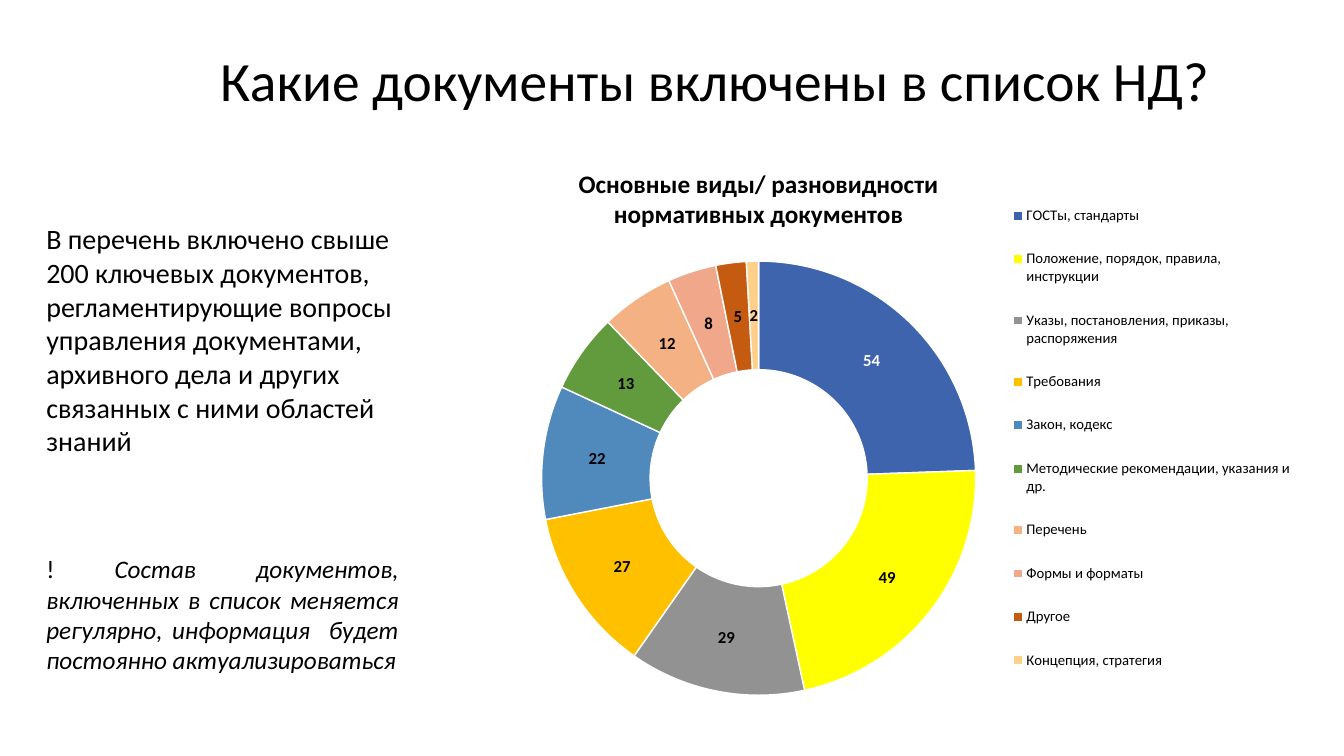
import pptx
import pptx.chart.data
import pptx.dml.color
import pptx.enum.chart
import pptx.enum.text
import pptx.oxml
import pptx.oxml.ns
import pptx.util

Pt = pptx.util.Pt
FONT = "Calibri"
COLOURS = {"text": "000000", "light": "FFFFFF"}
DOCUMENT_KINDS = [
    ("ГОСТы, стандарты", 54, "3D64AD"),
    ("Положение, порядок, правила, инструкции", 49, "FFFF00"),
    ("Указы, постановления, приказы, распоряжения", 29, "929292"),
    ("Требования", 27, "FFC000"),
    ("Закон, кодекс", 22, "508ABD"),
    ("Методические рекомендации, указания и др.", 13, "629A3E"),
    ("Перечень", 12, "F4B183"),
    ("Формы и форматы", 8, "F1A78A"),
    ("Другое", 5, "C55A11"),
    ("Концепция, стратегия", 2, "FFD08A"),
]
CHART_TITLE = ["Основные виды/ разновидности", "нормативных документов"]


def rgb(value):
    return pptx.dml.color.RGBColor.from_string(value)


def style_font(font, size, bold=False, colour="text"):
    font.name = FONT
    font.size = Pt(size)
    font.bold = bold
    font.color.rgb = rgb(COLOURS[colour])


def place_in_chart(part, index, inner=False, **fractions):
    """Give a chart part a manual layout in fractions of the chart."""
    for old in part.findall(pptx.oxml.ns.qn("c:layout")):
        part.remove(old)
    settings = [("layoutTarget", "inner")] if inner else []
    settings += [("xMode", "edge"), ("yMode", "edge"), *fractions.items()]
    items = "".join(f'<c:{tag} val="{value}"/>' for tag, value in settings)
    part.insert(index, pptx.oxml.parse_xml(
        f'<c:layout {pptx.oxml.ns.nsdecls("c")}>'
        f"<c:manualLayout>{items}</c:manualLayout></c:layout>"))


def add_heading(slide, left, top, width, height):
    heading = slide.shapes.title
    heading.left, heading.top = Pt(left), Pt(top)
    heading.width, heading.height = Pt(width), Pt(height)
    frame = heading.text_frame
    frame.text = "Какие документы включены в список НД?"
    frame.auto_size = pptx.enum.text.MSO_AUTO_SIZE.NONE
    frame.vertical_anchor = pptx.enum.text.MSO_ANCHOR.MIDDLE
    paragraph = frame.paragraphs[0]
    paragraph.alignment = pptx.enum.text.PP_ALIGN.LEFT
    paragraph.line_spacing = 0.9
    style_font(paragraph.font, 39.6)


def add_note(slide, left, top, width, height, size):
    """Add an empty wrapping text box and return its paragraph."""
    note = slide.shapes.add_textbox(Pt(left), Pt(top), Pt(width), Pt(height))
    note.text_frame.word_wrap = True
    paragraph = note.text_frame.paragraphs[0]
    style_font(paragraph.font, size)
    return paragraph


def add_explanation(slide, left, top, width):
    summary = add_note(slide, left, top, width, 177, 20)
    summary.add_run().text = (
        "В перечень включено свыше 200 ключевых документов, регламентирующие "
        "вопросы управления документами, архивного дела и других связанных "
        "с ними областей знаний")

    warning = add_note(slide, left, top + 237, width - 15, 94, 18)
    warning.alignment = pptx.enum.text.PP_ALIGN.JUSTIFY
    warning.add_run().text = "! "
    changes = warning.add_run()
    changes.text = (
        "Состав документов, включенных в список меняется регулярно, "
        "информация  будет постоянно актуализироваться")
    changes.font.italic = True


def add_kinds_chart(slide, left, top, width, height):
    kinds, counts, fills = zip(*DOCUMENT_KINDS)
    data = pptx.chart.data.CategoryChartData()
    data.categories = kinds
    data.add_series("Series 1", counts)
    chart = slide.shapes.add_chart(
        pptx.enum.chart.XL_CHART_TYPE.DOUGHNUT,
        Pt(left), Pt(top), Pt(width), Pt(height), data).chart
    style_font(chart.font, 10)

    chart.has_title = True
    title = chart.chart_title
    title.text_frame.text = "\n".join(CHART_TITLE)
    sides = (pptx.enum.text.PP_ALIGN.LEFT, pptx.enum.text.PP_ALIGN.RIGHT)
    for paragraph, side in zip(title.text_frame.paragraphs, sides):
        paragraph.alignment = side
        style_font(paragraph.font, 18, bold=True)
    place_in_chart(title._element, 1, x=0.15, y=0.03)

    chart.has_legend = True
    chart.legend.position = pptx.enum.chart.XL_LEGEND_POSITION.RIGHT
    chart.legend.include_in_layout = False
    style_font(chart.legend.font, 10.5)
    place_in_chart(chart.legend._element, 1, x=0.67, y=0.06, w=0.33, h=0.9)

    ring = chart.plots[0]
    ring.vary_by_categories = True
    place_in_chart(ring._element.getparent(), 0, inner=True,
                   x=0.11, y=0.2, w=0.51, h=0.76)
    series = ring.series[0]
    series.data_labels.show_value = True
    series.data_labels.show_percentage = False
    style_font(series.data_labels.font, 12, bold=True)
    for index, fill in enumerate(fills):
        slice_format = series.points[index].format
        slice_format.fill.solid()
        slice_format.fill.fore_color.rgb = rgb(fill)
        slice_format.line.color.rgb = rgb(COLOURS["light"])
        slice_format.line.width = Pt(1)
    style_font(series.points[0].data_label.font, 12, bold=True, colour="light")


def main():
    deck = pptx.Presentation()
    deck.slide_width, deck.slide_height = Pt(960), Pt(540)
    slide = deck.slides.add_slide(deck.slide_layouts[5])
    add_heading(slide, 150, 39, 767, 42)
    add_kinds_chart(slide, 320, 105, 608, 408)
    add_explanation(slide, 26, 155, 281)
    deck.save("out.pptx")


if __name__ == "__main__":
    main()
